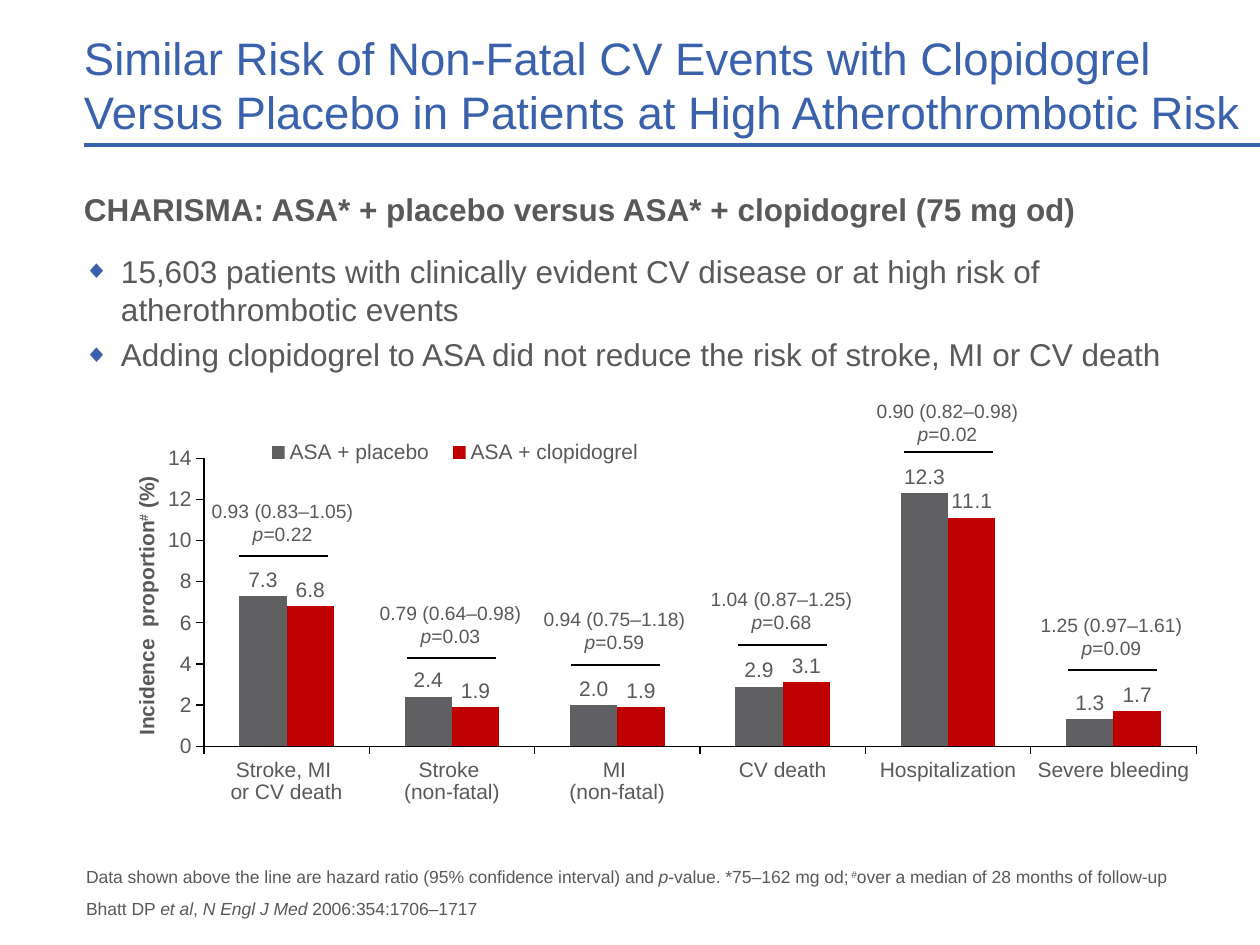
"""Build a slide comparing cardiovascular event rates with clopidogrel and placebo."""
from lxml.etree import SubElement
from pptx import Presentation
from pptx.chart.data import CategoryChartData
from pptx.dml.color import RGBColor
from pptx.enum.chart import XL_CHART_TYPE, XL_LABEL_POSITION, XL_LEGEND_POSITION, XL_TICK_MARK
from pptx.enum.shapes import MSO_CONNECTOR
from pptx.enum.text import MSO_ANCHOR, MSO_AUTO_SIZE, PP_ALIGN
from pptx.oxml.ns import qn
from pptx.util import Emu, Pt

BLUE = RGBColor(0x39, 0x61, 0xAC)
TEXT_GREY = RGBColor(0x59, 0x59, 0x59)
BAR_GREY = RGBColor(0x60, 0x5F, 0x62)
RED = RGBColor(0xC0, 0x00, 0x00)
BLACK = RGBColor(0x00, 0x00, 0x00)

PX_PER_INCH = 126
LEFT, CONTENT_WIDTH = 84, 1142

TITLE = ("Similar Risk of Non-Fatal CV Events with Clopidogrel "
         "Versus Placebo in Patients at High Atherothrombotic Risk")
SUBTITLE = "CHARISMA: ASA* + placebo versus ASA* + clopidogrel (75 mg od)"
BULLETS = [
    "15,603 patients with clinically evident CV disease or at high risk of atherothrombotic events",
    "Adding clopidogrel to ASA did not reduce the risk of stroke, MI or CV death",
]
CATEGORIES = ["Stroke, MI \nor CV death", "Stroke \n(non-fatal)", "MI \n(non-fatal)",
              "CV death", "Hospitalization", "Severe bleeding"]
SERIES = [
    ("ASA + placebo", (7.3, 2.4, 2.0, 2.9, 12.3, 1.3), BAR_GREY),
    ("ASA + clopidogrel", (6.8, 1.9, 1.9, 3.1, 11.1, 1.7), RED),
]
AXIS_TITLE = [("Incidence  proportion", ""), ("#", "superscript"), (" (%)", "")]
HAZARD_RATIOS = [
    (180, 493, 556, "0.93 (0.83–1.05)", "0.22"),
    (348, 595, 658, "0.79 (0.64–0.98)", "0.03"),
    (512, 601, 665, "0.94 (0.75–1.18)", "0.59"),
    (679, 581, 645, "1.04 (0.87–1.25)", "0.68"),
    (845, 393, 452, "0.90 (0.82–0.98)", "0.02"),
    (1009, 607, 670, "1.25 (0.97–1.61)", "0.09"),
]
FOOTNOTES = [
    [("Data shown above the line are hazard ratio (95% confidence interval) and ", ""),
     ("p", "italic"), ("-value. *75–162 mg od;", ""), (" #", "superscript"),
     ("over a median of 28 months of follow-up", "")],
    [("Bhatt DP ", ""), ("et al", "italic"), (",", ""), (" N Engl J Med ", "italic"),
     ("2006:354:1706–1717", "")],
]


def px(length):
    """Turn pixels into EMU."""
    return Emu(round(length * 914400 / PX_PER_INCH))


class SlideBuilder:
    """Hold the style and the current slide."""

    font_name = "Arial"

    def __init__(self, presentation):
        """Add a title-only slide."""
        self.slide = presentation.slides.add_slide(presentation.slide_layouts[5])

    def style_font(self, font, size, color=TEXT_GREY, bold=False):
        """Apply the slide's typeface to a font."""
        font.name = self.font_name
        font.size = Pt(size)
        font.color.rgb = color
        font.bold = bold

    def add_runs(self, paragraph, runs, size, color=TEXT_GREY, bold=False):
        """Fill a paragraph with (text, emphasis) runs."""
        for text, emphasis in runs:
            run = paragraph.add_run()
            run.text = text
            self.style_font(run.font, size, color, bold)
            if emphasis == "italic":
                run.font.italic = True
            elif emphasis == "superscript":
                run.font._element.set("baseline", "30000")

    def clear_frame(self, frame, anchor):
        """Remove the margins of a text frame and set its anchor."""
        frame.word_wrap = True
        frame.auto_size = MSO_AUTO_SIZE.NONE
        frame.vertical_anchor = anchor
        frame.margin_left = frame.margin_right = frame.margin_top = frame.margin_bottom = 0

    def title(self, text, left, top, width, height):
        """Place and format the title placeholder."""
        shape = self.slide.shapes.title
        shape.left, shape.top, shape.width, shape.height = map(px, (left, top, width, height))
        self.clear_frame(shape.text_frame, MSO_ANCHOR.BOTTOM)
        paragraph = shape.text_frame.paragraphs[0]
        paragraph.alignment = PP_ALIGN.LEFT
        self.add_runs(paragraph, [(text, "")], 26, BLUE)

    def text(self, box, paragraphs, size, space, bold=False, anchor=MSO_ANCHOR.TOP, bullet=False):
        """Add a text box of run lists."""
        frame = self.slide.shapes.add_textbox(*map(px, box)).text_frame
        self.clear_frame(frame, anchor)
        for index, runs in enumerate(paragraphs):
            paragraph = frame.add_paragraph() if index else frame.paragraphs[0]
            paragraph.space_before = Pt(space)
            self.add_runs(paragraph, runs, size, bold=bold)
            if bullet:
                self.bullet(paragraph)

    def bullet(self, paragraph):
        """Give a paragraph a blue diamond and a hanging indent."""
        properties = paragraph._p.get_or_add_pPr()
        properties.set("marL", str(px(37)))
        properties.set("indent", str(-px(37)))
        color = SubElement(properties, qn("a:buClr"))
        SubElement(color, qn("a:srgbClr"), val=str(BLUE))
        SubElement(properties, qn("a:buSzPct"), val="80000")
        SubElement(properties, qn("a:buFont"), typeface=self.font_name)
        SubElement(properties, qn("a:buChar"), char="◆")

    def rule(self, shapes, left, right, top, color, weight):
        """Add a horizontal line."""
        line = shapes.add_connector(MSO_CONNECTOR.STRAIGHT, px(left), px(top), px(right), px(top))
        line.line.color.rgb = color
        line.line.width = Pt(weight)
        SubElement(line._element.spPr, qn("a:effectLst"))

    def hazard_ratio(self, left, top, line_top, ratio, p_value):
        """Add a hazard ratio grouped with the line below it."""
        shapes = self.slide.shapes.add_group_shape().shapes
        frame = shapes.add_textbox(px(left), px(top), px(205), px(59)).text_frame
        frame.word_wrap = True
        paragraph = frame.paragraphs[0]
        paragraph.alignment = PP_ALIGN.CENTER
        self.add_runs(paragraph, [(f"{ratio} ", ""), ("p", "italic"), (f"={p_value}", "")], 11)
        self.rule(shapes, left + 59, left + 148, line_top, BLACK, 1)

    def place(self, element, index, inner=False, **fractions):
        """Give a chart part a manual layout."""
        for old in element.findall(qn("c:layout")):
            element.remove(old)
        layout = element.makeelement(qn("c:layout"))
        element.insert(index, layout)
        manual = SubElement(layout, qn("c:manualLayout"))
        if inner:
            SubElement(manual, qn("c:layoutTarget"), val="inner")
        for key in ("x", "y"):
            SubElement(manual, qn(f"c:{key}Mode"), val="edge")
        for key, value in fractions.items():
            SubElement(manual, qn(f"c:{key}"), val=str(value))

    def chart(self, left, top, width, height):
        """Add the clustered column chart."""
        data = CategoryChartData(number_format="#,##0.0")
        data.categories = CATEGORIES
        for name, values, _ in SERIES:
            data.add_series(name, values)
        chart = self.slide.shapes.add_chart(
            XL_CHART_TYPE.COLUMN_CLUSTERED, *map(px, (left, top, width, height)), data).chart
        self.style_font(chart.font, 12)
        chart.has_title = False
        chart.has_legend = True
        chart.legend.position = XL_LEGEND_POSITION.TOP
        chart.legend.include_in_layout = False
        self.style_font(chart.legend.font, 12)
        for axis in (chart.category_axis, chart.value_axis):
            axis.has_major_gridlines = False
            axis.major_tick_mark = XL_TICK_MARK.OUTSIDE
            axis.minor_tick_mark = XL_TICK_MARK.NONE
            axis.format.line.color.rgb = BLACK
            axis.format.line.width = Pt(0.75)
            self.style_font(axis.tick_labels.font, 12)
        axis = chart.value_axis
        axis.minimum_scale, axis.maximum_scale, axis.major_unit = 0, 14, 2
        axis.tick_labels.number_format = "General"
        axis.tick_labels.number_format_is_linked = False
        self.add_runs(axis.axis_title.text_frame.paragraphs[0], AXIS_TITLE, 12, bold=True)
        plot = chart.plots[0]
        plot.gap_width, plot.overlap, plot.vary_by_categories = 150, 0, False
        for series, (_, _, color) in zip(plot.series, SERIES):
            series.format.fill.solid()
            series.format.fill.fore_color.rgb = color
            labels = series.data_labels
            labels.show_value = True
            labels.position = XL_LABEL_POSITION.OUTSIDE_END
            labels.number_format = "#,##0.0"
            labels.number_format_is_linked = False
            self.style_font(labels.font, 12)
        find = chart.element.xpath
        self.place(find(".//c:plotArea")[0], 0, True, x=0.105, y=0.158, w=0.869, h=0.658)
        self.place(find(".//c:legend")[0], 1, x=0.15, y=0.11, w=0.35, h=0.07)
        self.place(find(".//c:valAx/c:title")[0], 1, x=0.04, y=0.19)


def main():
    """Build and save the slide."""
    presentation = Presentation()
    presentation.slide_width, presentation.slide_height = px(1260), px(945)
    builder = SlideBuilder(presentation)
    builder.rule(builder.slide.shapes, LEFT, 1260, 145, BLUE, 2.25)
    builder.title(TITLE, LEFT, -26, 1176, 165)
    builder.text((LEFT, 190, CONTENT_WIDTH, 54), [[(SUBTITLE, "")]], 18, 6, bold=True)
    builder.text((LEFT, 252, CONTENT_WIDTH, 609), [[(text, "")] for text in BULLETS],
                 18, 4.5, bullet=True)
    builder.chart(LEFT, 389, CONTENT_WIDTH, 438)
    for entry in HAZARD_RATIOS:
        builder.hazard_ratio(*entry)
    builder.text((86, 866, 1140, 53), FOOTNOTES, 10, 6, anchor=MSO_ANCHOR.BOTTOM)
    presentation.save("out.pptx")


if __name__ == "__main__":
    main()
